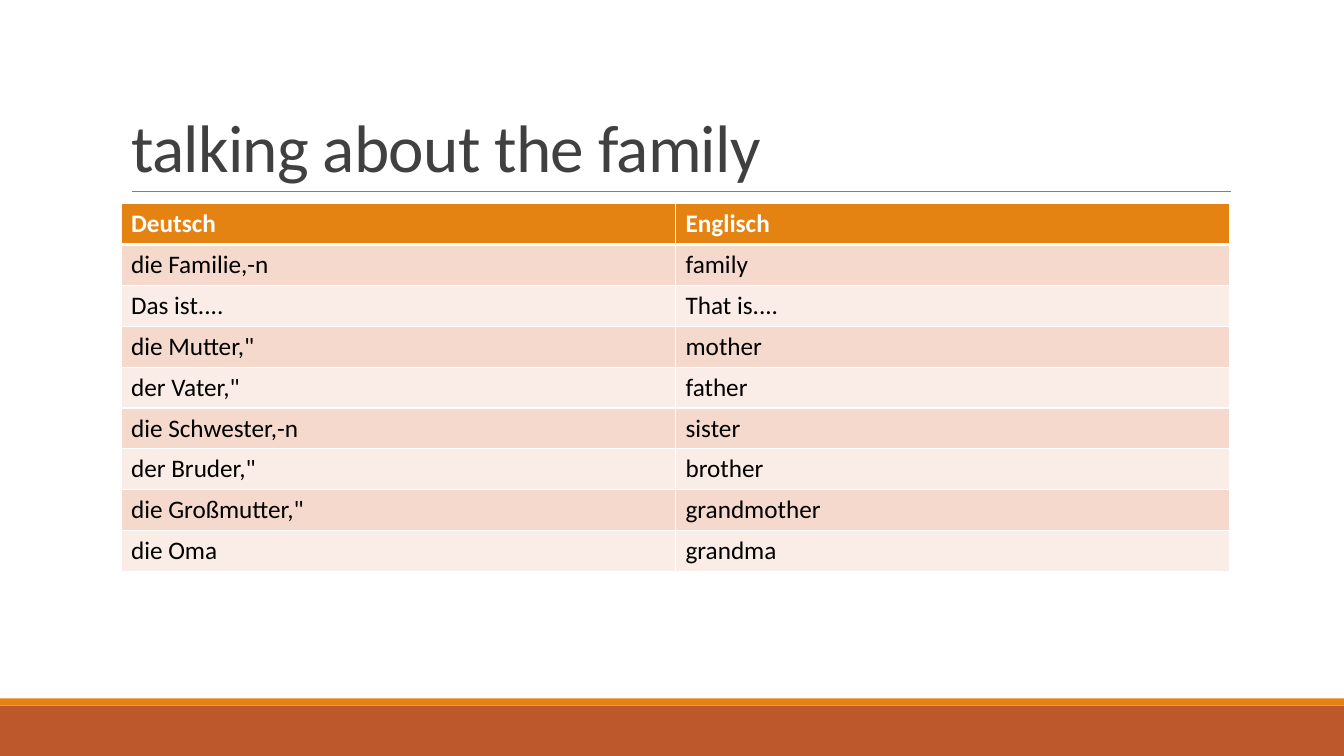
from lxml import etree
from pptx import Presentation
from pptx.dml.color import RGBColor
from pptx.enum.shapes import MSO_CONNECTOR, MSO_SHAPE
from pptx.enum.text import MSO_ANCHOR
from pptx.oxml.ns import qn
from pptx.util import Inches, Pt

RECT = MSO_SHAPE.RECTANGLE
LINE = MSO_CONNECTOR.STRAIGHT
BOTTOM = MSO_ANCHOR.BOTTOM
TITLE_ONLY = 5

WIDTH, HEIGHT = 13.33, 7.5
ORANGE, RUST, WHITE = "E48312", "BD582C", "FFFFFF"
BANDS = ["FAEDE7", "F5D9CC"]
WORDS = [
    ("Deutsch", "Englisch"),
    ("die Familie,-n", "family"),
    ("Das ist....", "That is...."),
    ("die Mutter,\"", "mother"),
    ("der Vater,\"", "father"),
    ("die Schwester,-n", "sister"),
    ("der Bruder,\"", "brother"),
    ("die Großmutter,\"", "grandmother"),
    ("die Oma", "grandma"),
]


def paint(target, color):
    target.solid()
    target.fore_color.rgb = RGBColor.from_string(color)


def style(font, color, **values):
    paint(font.fill, color)
    for name, value in {"name": "Calibri", **values}.items():
        setattr(font, name, value)


def add_bar(slide, left, top, width, height, color):
    bar = slide.shapes.add_shape(RECT, *map(Inches, (left, top, width, height)))
    bar.shadow.inherit = False
    paint(bar.fill, color)
    bar.line.fill.background()


def add_footer(slide, left, top, width, height):
    """Draw a thin orange stripe above a rust band."""
    stripe = 0.07
    add_bar(slide, left, top + stripe, width, height - stripe, RUST)
    add_bar(slide, left, top, width, stripe, ORANGE)


def add_title(slide, left, top, width, height):
    """Fill the title and rule a line under it."""
    title = slide.shapes.title
    box = {"left": left, "top": top, "width": width, "height": height}
    for name, value in box.items():
        setattr(title, name, Inches(value))
    frame = title.text_frame
    frame.text = "talking about the family"
    frame.vertical_anchor = BOTTOM
    frame.word_wrap = True
    para = frame.paragraphs[0]
    para.line_spacing = 0.85
    para.alignment = 1
    run = para.runs[0]
    style(run.font, "404040", size=Pt(48))
    run.font._element.set("spc", "-50")

    start, base = left + 0.11, top + height
    rule = slide.shapes.add_connector(
        LINE, *map(Inches, (start, base, start + 10.9, base)))
    paint(rule.line.fill, "808080")
    rule.line.width = Pt(0.5)
    etree.SubElement(rule._element.spPr, qn("a:effectLst"))


def add_borders(cell, widths):
    """Add white borders, with widths in points by side."""
    props = cell._tc.get_or_add_tcPr()
    for side, width in widths.items():
        line = etree.SubElement(props, qn(f"a:ln{side}"), w=str(Pt(width)))
        fill = etree.SubElement(line, qn("a:solidFill"))
        etree.SubElement(fill, qn("a:srgbClr"), val=WHITE)


def add_words(slide, left, top, width, height):
    shape = slide.shapes.add_table(
        len(WORDS), 2, *map(Inches, (left, top, width, height)))
    table = shape.table
    for row, pair in enumerate(WORDS):
        head = row == 0
        widths = {"L": 1, "R": 1, "T": 3 if row == 1 else 1,
                  "B": 3 if head else 1}
        for col, text in enumerate(pair):
            cell = table.cell(row, col)
            cell.text = text
            add_borders(cell, widths)
            paint(cell.fill, ORANGE if head else BANDS[row % 2])
            style(cell.text_frame.paragraphs[0].runs[0].font,
                  WHITE if head else "000000", size=Pt(18), bold=head)


def main():
    deck = Presentation()
    deck.slide_width, deck.slide_height = Inches(WIDTH), Inches(HEIGHT)
    slide = deck.slides.add_slide(deck.slide_layouts[TITLE_ONLY])
    add_footer(slide, 0, 6.93, WIDTH, 0.57)
    add_title(slide, 1.2, 0.31, 11, 1.59)
    add_words(slide, 1.2, 2.02, 11, 3.65)
    deck.save("out.pptx")


if __name__ == "__main__":
    main()
